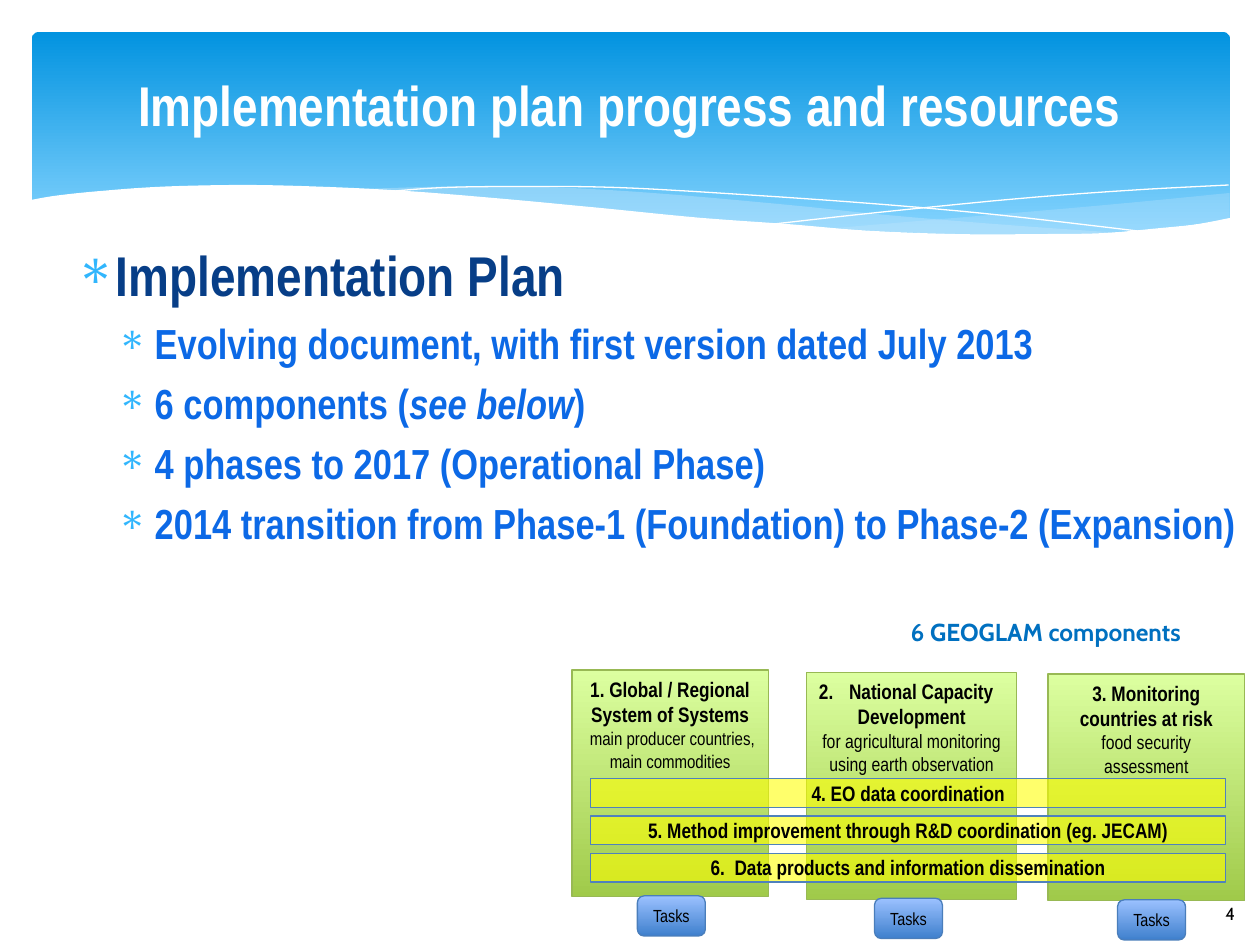
from lxml.etree import SubElement
from pptx import Presentation
from pptx.dml.color import RGBColor
from pptx.enum.shapes import MSO_SHAPE as Shape
from pptx.enum.text import MSO_ANCHOR as Anchor, PP_ALIGN as Align
from pptx.oxml.ns import qn
from pptx.util import Cm, Pt

NARROW, CABIN = "Arial Narrow", "Cabin"
GREEN = ("A0CA4A", "DCFFA0")
BLUE = ("3F80CD", "9BC1FF")

# Header waves: points in cm that smooth edges pass through
WHITE_WAVE = [(0.58, 4.04), (1.17, 3.94), (2.16, 3.84), (3.35, 3.76), (4.9, 3.73),
              (6.35, 3.76), (8.03, 3.84), (9.93, 3.99), (12.07, 4.19), (14.1, 4.39),
              (15.9, 4.52), (17.48, 4.65), (19.33, 4.72), (20.9, 4.72), (22.23, 4.7),
              (23.37, 4.6), (24.13, 4.52), (24.82, 4.39)]
WHITE_BASE = [(24.82, 5.31), (0.58, 5.31)]
SMALL_TOP = [(24.79, 3.89), (21.87, 4.17), (16.79, 4.6)]
SMALL_BOTTOM = [(16.79, 4.6), (18.59, 4.7), (20.12, 4.75), (21.69, 4.72),
                (23.39, 4.6), (24.79, 4.42)]
LARGE_TOP = [(22.68, 4.7), (20.5, 4.55), (17.93, 4.34), (15.98, 4.14),
             (13.41, 3.91), (11.23, 3.78), (9.17, 3.76), (7.26, 3.81)]
LARGE_BOTTOM = [(7.26, 3.81), (9.73, 3.99), (11.4, 4.14), (14.38, 4.42), (16.51, 4.6),
                (18.69, 4.7), (20.5, 4.75), (21.77, 4.72), (22.68, 4.7)]
FALLING_LINE = [(7.85, 3.86), (8.97, 3.78), (10.57, 3.76), (12.42, 3.78),
                (14.78, 3.91), (17.65, 4.11), (20.19, 4.34), (23.04, 4.67)]
RISING_LINE = [(15.57, 4.52), (17.65, 4.29), (20.47, 4.01), (22.73, 3.84), (24.77, 3.73)]

# Body: level, then runs of (text, italic)
PLAN = [
    (0, [("Implementation Plan", False)]),
    (1, [("Evolving document, with first version dated July 2013", False)]),
    (1, [("6 components (", False), ("see below", True), (")", False)]),
    (1, [("4 phases to 2017 (Operational Phase)", False)]),
    (1, [("2014 transition from Phase-1 (Foundation) to Phase-2 (Expansion)", False)]),
]

# Pillars: left, top, width, heading, start number, detail runs of (text, size)
PILLARS = [
    (11.53, 13.51, 3.96, "1. Global / Regional System of Systems", None,
     [(" ", 11), ("main producer countries, main commodities", 10.5)]),
    (16.26, 13.56, 4.24, " National Capacity Development", 2,
     [("for agricultural monitoring using earth observation", 11)]),
    (21.13, 13.59, 3.96, "3. Monitoring countries at risk", None,
     [("food security assessment", 11)]),
]
TASK_LEFTS = [12.85, 17.63, 22.53]
BARS = ["4. EO data coordination",
        "5. Method improvement through R&D coordination (eg. JECAM)",
        "6.  Data products and information dissemination"]


def rgb(hex_color):
    return RGBColor.from_string(hex_color)


def fill_solid(shape, color, opacity=100):
    shape.fill.solid()
    shape.fill.fore_color.rgb = rgb(color)
    if opacity < 100:
        color_node = shape.fill._xPr.find(qn("a:solidFill"))[0]
        SubElement(color_node, qn("a:alpha"), val=str(opacity * 1000))


def fill_gradient(shape, colors, angle, end=1.0):
    shape.fill.gradient()
    shape.fill.gradient_angle = angle
    for stop, color, position in zip(shape.fill.gradient_stops, colors, (0, end)):
        stop.color.rgb = rgb(color)
        stop.position = position


def outline(shape, color=None, width=0.75):
    if color is None:
        shape.line.fill.background()
    else:
        shape.line.color.rgb = rgb(color)
        shape.line.width = Pt(width)


def add_box(slide, preset, left, top, width, height):
    box = slide.shapes.add_shape(preset, Cm(left), Cm(top), Cm(width), Cm(height))
    box.shadow.inherit = False
    box.text_frame.word_wrap = True
    return box


def add_label(slide, left, top, width, height, anchor=Anchor.TOP, wrap=True):
    frame = slide.shapes.add_textbox(Cm(left), Cm(top), Cm(width), Cm(height)).text_frame
    frame.word_wrap = wrap
    frame.vertical_anchor = anchor
    return frame


def write(paragraph, text, size, color="000000", font=NARROW, bold=False, italic=False,
          align=None):
    if align is not None:
        paragraph.alignment = align
    run = paragraph.add_run()
    run.text = text
    run.font.name, run.font.size = font, Pt(size)
    run.font.bold, run.font.italic = bold, italic
    run.font.color.rgb = rgb(color)


def smooth(points, steps=6):
    """Catmull-Rom curve through the points."""
    padded = [points[0], *points, points[-1]]
    curve = [points[0]]
    for p0, p1, p2, p3 in zip(padded, padded[1:], padded[2:], padded[3:]):
        for step in range(1, steps + 1):
            t = step / steps
            curve.append(tuple(
                b + t * (c - a) / 2 + t**2 * (2 * a - 5 * b + 4 * c - d) / 2
                + t**3 * (3 * b - a - 3 * c + d) / 2
                for a, b, c, d in zip(p0, p1, p2, p3)))
    return curve


def add_wave(slide, points, closed=True):
    start, *rest = [(Cm(x), Cm(y)) for x, y in points]
    builder = slide.shapes.build_freeform(*start)
    builder.add_line_segments(rest, close=closed)
    wave = builder.convert_to_shape()
    wave.shadow.inherit = False
    return wave


def add_header(slide):
    banner = add_box(slide, Shape.ROUNDED_RECTANGLE, 0.64, 0.64, 24.16, 4.45)
    banner.adjustments[0] = 0.034
    fill_gradient(banner, ("0293E0", "83D3FE"), 270, end=0.9)
    outline(banner)
    waves = [(smooth(SMALL_TOP) + smooth(SMALL_BOTTOM), "C6E7FC", 29),
             (smooth(LARGE_TOP) + smooth(LARGE_BOTTOM), "C6E7FC", 40)]
    for points, color, opacity in waves:
        wave = add_wave(slide, points)
        fill_solid(wave, color, opacity)
        outline(wave)
    for points in (FALLING_LINE, RISING_LINE):
        thread = add_wave(slide, smooth(points), closed=False)
        thread.fill.background()
        outline(thread, "FFFFFF", 0)
    edge = add_wave(slide, smooth(WHITE_WAVE) + WHITE_BASE)
    fill_solid(edge, "FFFFFF")
    outline(edge)


def add_plan(slide):
    frame = add_label(slide, 1.27, 4.72, 24.13, 12.29)
    for index, (level, runs) in enumerate(PLAN):
        paragraph = frame.paragraphs[0] if index == 0 else frame.add_paragraph()
        paragraph.level = level
        if index:
            paragraph.space_before = Pt(5.5)
        properties = paragraph._p.get_or_add_pPr()
        properties.set("marL", str(Cm((0.76, 1.6)[level])))
        properties.set("indent", str(-Cm(0.76)))
        bullet_color = SubElement(properties, qn("a:buClr"))
        SubElement(bullet_color, qn("a:srgbClr"), val="31B6FD")
        SubElement(properties, qn("a:buChar"), char="∗")
        for text, italic in runs:
            write(paragraph, text, (32, 24)[level], ("073E87", "0C69E6")[level],
                  bold=True, italic=italic)


def add_pillar(slide, left, top, width, heading, number, details):
    pillar = add_box(slide, Shape.RECTANGLE, left, top, width, 4.57)
    fill_gradient(pillar, GREEN, 90)
    outline(pillar, "98B954")
    frame = pillar.text_frame
    frame.vertical_anchor = Anchor.TOP
    title = frame.paragraphs[0]
    if number:
        SubElement(title._p.get_or_add_pPr(), qn("a:buAutoNum"),
                   type="arabicPeriod", startAt=str(number))
    write(title, heading, 12, bold=True, align=Align.CENTER)
    detail = frame.add_paragraph()
    for text, size in details:
        write(detail, text, size, align=Align.CENTER)


def add_components(slide):
    for pillar in PILLARS:
        add_pillar(slide, *pillar)
    # Cross-cutting bars
    for row, text in enumerate(BARS):
        bar = add_box(slide, Shape.RECTANGLE, 11.91, 15.7 + 0.75 * row, 12.8, 0.58)
        fill_solid(bar, "FFFF00", 58)
        outline(bar, "4F81BD")
        write(bar.text_frame.paragraphs[0], text, 12, bold=True, align=Align.CENTER)
    # Task buttons under the pillars
    for left, pillar in zip(TASK_LEFTS, PILLARS):
        task = add_box(slide, Shape.ROUNDED_RECTANGLE, left, pillar[1] + 4.55, 1.37, 0.81)
        fill_gradient(task, BLUE, 90)
        outline(task, "4A7EBB")
        write(task.text_frame.paragraphs[0], "Tasks", 10, align=Align.CENTER)
    caption = add_label(slide, 18.11, 12.32, 6.58, 0.86, wrap=False)
    write(caption.paragraphs[0], "6 GEOGLAM components", 14, "0070C0", CABIN, bold=True)


def main():
    deck = Presentation()
    deck.slide_width, deck.slide_height = Cm(25.4), Cm(19.05)
    slide = deck.slides.add_slide(deck.slide_layouts[6])
    add_header(slide)
    add_plan(slide)
    title = add_label(slide, 1.27, 0.84, 22.86, 2.51, Anchor.MIDDLE)
    write(title.paragraphs[0], "Implementation plan progress and resources", 32, "FFFFFF",
          bold=True, align=Align.CENTER)
    page = add_label(slide, 21.92, 17.91, 3.23, 1.02, Anchor.MIDDLE)
    write(page.paragraphs[0], "4", 10, font=CABIN, align=Align.RIGHT)
    add_components(slide)
    deck.save("out.pptx")


if __name__ == "__main__":
    main()
